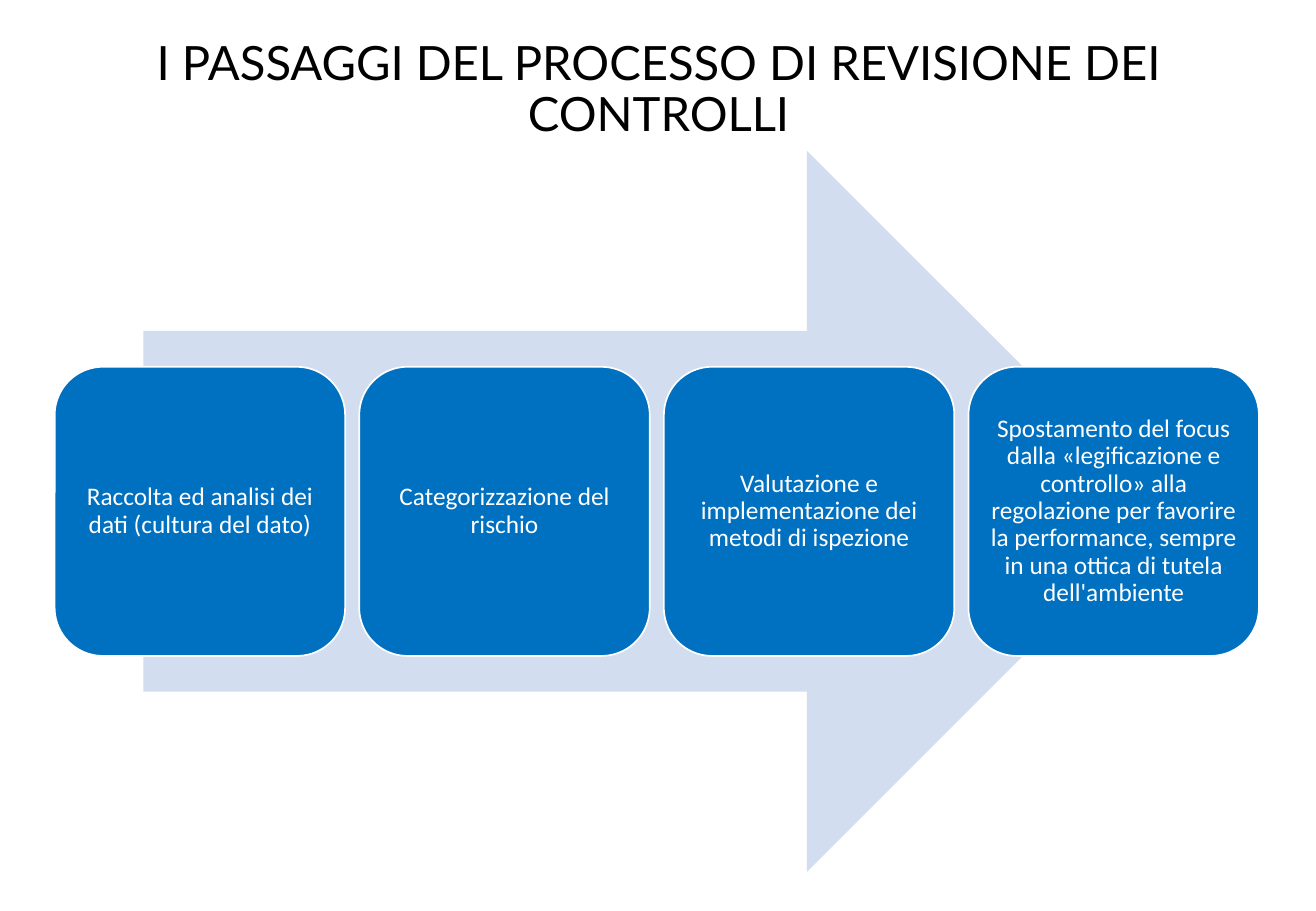
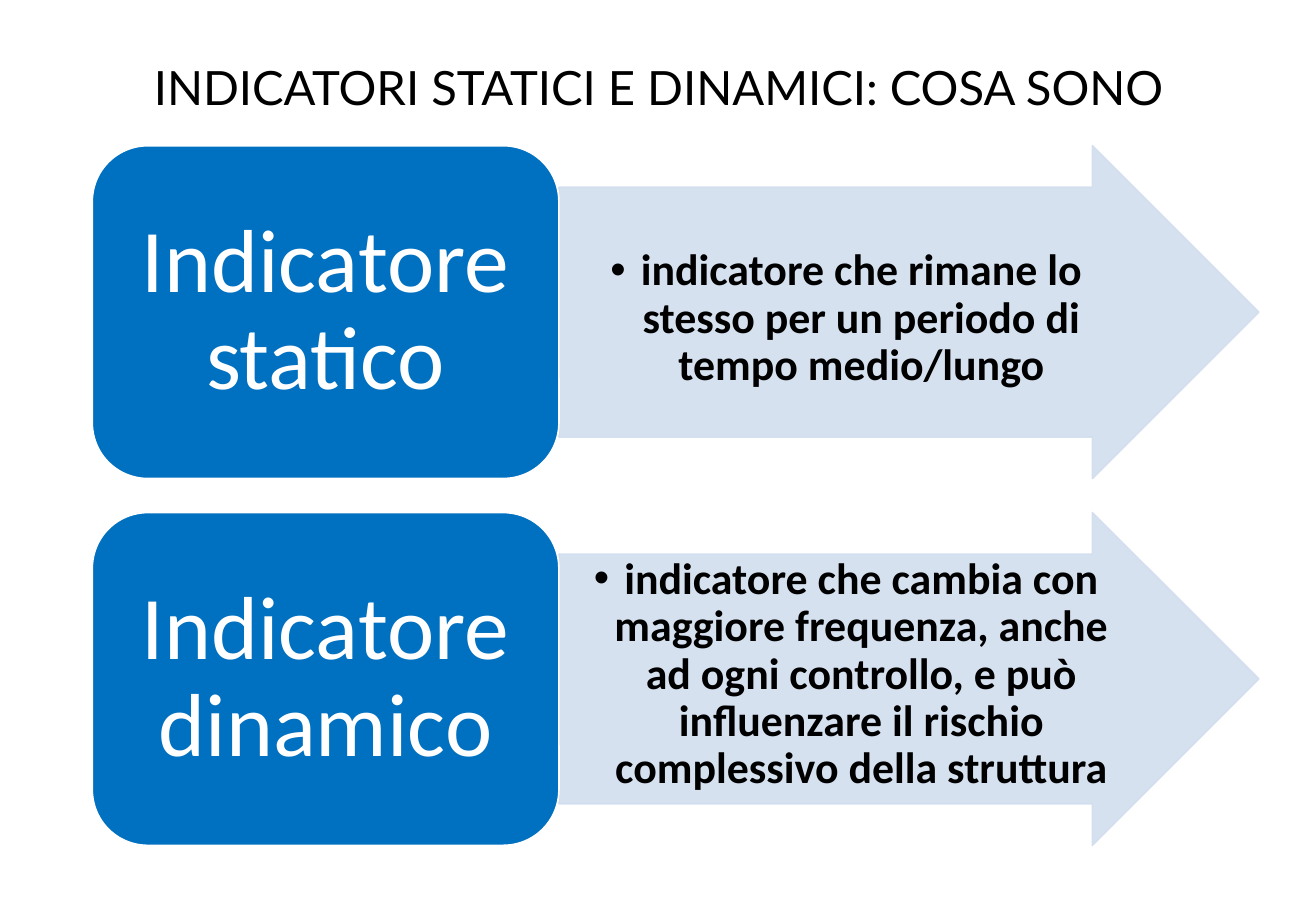
from dataclasses import dataclass

from lxml.etree import SubElement
from pptx import Presentation
from pptx.dml.color import RGBColor
from pptx.enum.shapes import MSO_SHAPE as Preset
from pptx.enum.text import MSO_ANCHOR as Anchor, PP_ALIGN as Align
from pptx.oxml.ns import qn
from pptx.shapes.base import BaseShape
from pptx.slide import Slide
from pptx.util import Inches, Pt

BLUE = RGBColor(0x00, 0x70, 0xC0)
PALE = RGBColor(0xD2, 0xDE, 0xEF)
WHITE = RGBColor(0xFF, 0xFF, 0xFF)
BLACK = RGBColor(0x00, 0x00, 0x00)


@dataclass(frozen=True)
class Box:
    left: float
    top: float
    width: float
    height: float


@dataclass(frozen=True)
class Style:
    size: float
    color: RGBColor
    side: float
    top: float
    font: str = "Calibri"
    bold: bool = False
    anchor: Anchor = Anchor.MIDDLE


@dataclass(frozen=True)
class Row:
    name: str
    note: str
    lead: float


TITLE = Style(28, BLACK, 0.1, 0.05, font="Lato")
STEP = Style(15, WHITE, 0.06, 0.06)
LABEL = Style(53, WHITE, 0.22, 0.11)

STEPS = (
    "Raccolta ed analisi dei dati (cultura del dato)",
    "Categorizzazione del rischio",
    "Valutazione e implementazione dei metodi di ispezione",
    "Spostamento del focus dalla «legificazione e controllo» alla regolazione "
    "per favorire la performance, sempre in una ottica di tutela dell'ambiente",
)
ROWS = (
    Row("Indicatore statico",
        "indicatore che rimane lo stesso per un periodo di tempo medio/lungo", 0.5),
    Row("Indicatore dinamico",
        "indicatore che cambia con maggiore frequenza, anche ad ogni controllo, "
        "e può influenzare il rischio complessivo della struttura", 0.02),
)


def write(shape: BaseShape, text: str, style: Style) -> None:
    frame = shape.text_frame
    frame.text = text
    frame.word_wrap = True
    frame.vertical_anchor = style.anchor
    frame.margin_left = frame.margin_right = Inches(style.side)
    frame.margin_top = Inches(style.top)
    frame.margin_bottom = Inches(min(style.top, style.side))
    for para in frame.paragraphs:
        para.alignment = Align.CENTER
        para.line_spacing = 0.9
        for run in para.runs:
            run.font.name = style.font
            run.font.size = Pt(style.size)
            run.font.bold = style.bold
            run.font.color.rgb = style.color


def place(box: Box) -> tuple[int, ...]:
    return tuple(Inches(n) for n in (box.left, box.top, box.width, box.height))


def add_shape(slide: Slide, kind: Preset, box: Box, fill: RGBColor,
              line: RGBColor | None = None) -> BaseShape:
    shape = slide.shapes.add_shape(kind, *place(box))
    shape.shadow.inherit = False
    shape.fill.solid()
    shape.fill.fore_color.rgb = fill
    if line is None:
        shape.line.fill.background()
    else:
        shape.line.color.rgb = line
        shape.line.width = Pt(1)
    return shape


def add_card(slide: Slide, box: Box, text: str, style: Style) -> None:
    card = add_shape(slide, Preset.ROUNDED_RECTANGLE, box, BLUE, WHITE)
    write(card, text, style)


def add_note(slide: Slide, box: Box, row: Row) -> None:
    arrow = add_shape(slide, Preset.RIGHT_ARROW, box, PALE, PALE)
    arrow.adjustments[0] = 0.75
    arrow.adjustments[1] = 0.5
    for color in arrow._element.spPr.iter(qn("a:srgbClr")):
        SubElement(color, qn("a:alpha"), val="90000")
    write(arrow, row.note,
          Style(26, BLACK, 0.02, row.lead, bold=True, anchor=Anchor.TOP))
    props = arrow.text_frame.paragraphs[0]._p.get_or_add_pPr()
    props.set("marL", str(Inches(0.25)))
    props.set("indent", str(Inches(-0.25)))
    SubElement(props, qn("a:buFont"), typeface="Arial")
    SubElement(props, qn("a:buChar"), char="•")


def add_slide(deck: Presentation, title: str) -> Slide:
    slide = deck.slides.add_slide(deck.slide_layouts[6])
    box = slide.shapes.add_textbox(*place(Box(0.2, 0.02, 10.44, 1.45)))
    write(box, title, TITLE)
    return slide


def add_steps(deck: Presentation) -> None:
    slide = add_slide(deck, "I PASSAGGI DEL PROCESSO DI REVISIONE DEI CONTROLLI")
    add_shape(slide, Preset.RIGHT_ARROW, Box(1.18, 1.24, 8.43, 5.94), PALE)
    first, last = 0.45, 7.97
    pitch = (last - first) / (len(STEPS) - 1)
    for i, text in enumerate(STEPS):
        add_card(slide, Box(first + i * pitch, 3.02, 2.39, 2.38), text, STEP)


def add_rows(deck: Presentation) -> None:
    slide = add_slide(deck, "INDICATORI STATICI E DINAMICI: COSA SONO")
    left, width, height, gap = 0.76, 3.84, 2.74, 0.28
    for i, row in enumerate(ROWS):
        top = 1.2 + i * (height + gap)
        add_note(slide, Box(left + width, top, 5.76, height), row)
        add_card(slide, Box(left, top, width, height), row.name, LABEL)


def main() -> None:
    deck = Presentation()
    deck.slide_width = Inches(10.83)
    deck.slide_height = Inches(7.5)
    add_steps(deck)
    add_rows(deck)
    deck.save("out.pptx")


if __name__ == "__main__":
    main()
